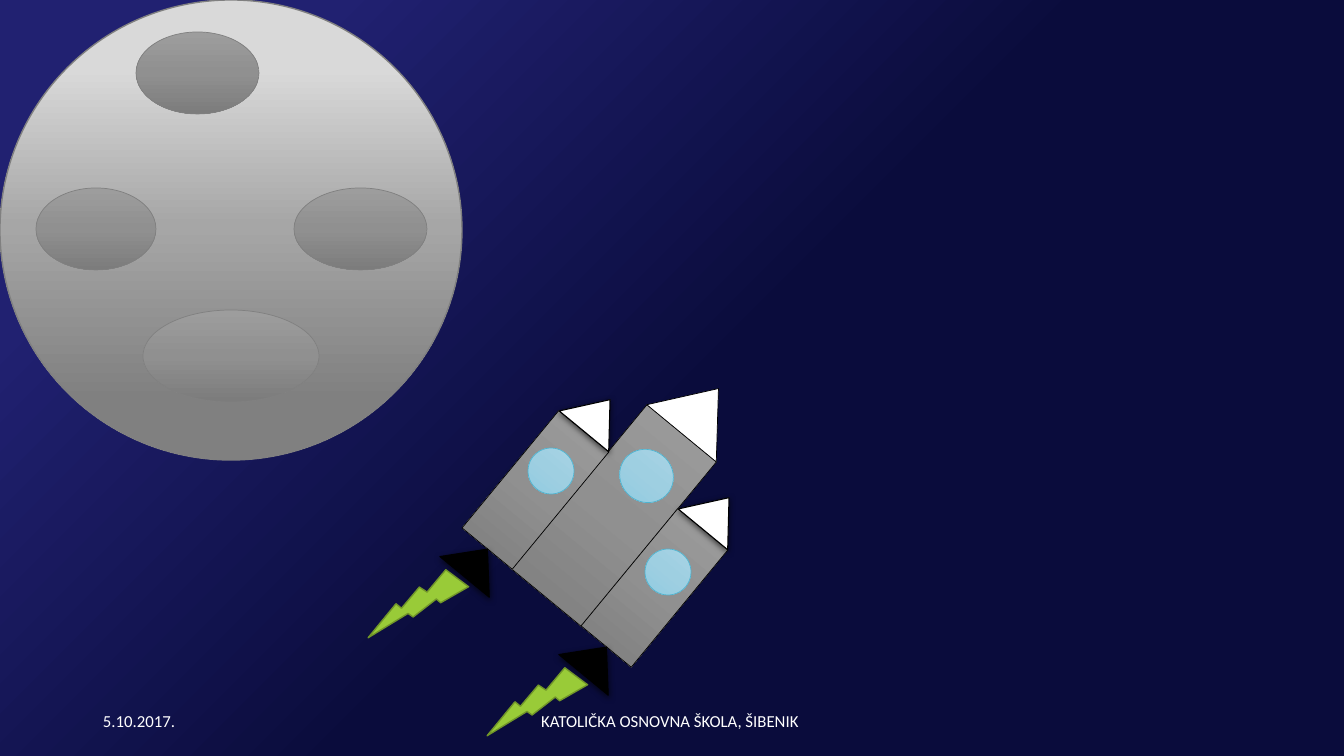
from copy import deepcopy
from dataclasses import dataclass

from lxml import etree
from pptx import Presentation
from pptx.dml.color import RGBColor
from pptx.enum.shapes import MSO_SHAPE
from pptx.enum.text import MSO_ANCHOR, PP_ALIGN
from pptx.oxml.ns import qn
from pptx.util import Emu, Pt

ELLIPSE = MSO_SHAPE.OVAL
RECTANGLE = MSO_SHAPE.RECTANGLE
TRIANGLE = MSO_SHAPE.ISOSCELES_TRIANGLE
BOLT = MSO_SHAPE.LIGHTNING_BOLT
MIDDLE = MSO_ANCHOR.MIDDLE
LEFT, CENTER = PP_ALIGN.LEFT, PP_ALIGN.CENTER

EMU_PER_PX = 12192000 / 1344
SLIDE_SIZE = (1344, 756)
ROCKET_TILT = 39.5
FLAME_TILT = 79.7
BOOSTER_OFFSETS = ((0, 0), (119, 98))


@dataclass(frozen=True)
class Theme:
    """Gradients are (percent, colour) stops."""
    sky: tuple = ((16, "212171"), (52, "0A0C3C"), (94, "0A0C3C"))
    moon: tuple = ((15, "D9D9D9"), (49, "A6A6A6"), (87, "808080"))
    metal: tuple = ((0, "9D9D9D"), (50, "909090"), (100, "7C7C7C"))
    glass: tuple = ((0, "ACD6E6"), (50, "9ECFE1"), (100, "8CCAE0"))
    moon_edge: str = "808080"
    glass_edge: str = "4EB3CF"
    flame: str = "99CB38"
    flame_edge: str = "719629"
    black: str = "000000"
    white: str = "FFFFFF"
    font: str = "Calibri"
    footer_size: int = 12


THEME = Theme()


def px(length):
    return Emu(round(length * EMU_PER_PX))


def rgb(colour):
    return RGBColor.from_string(colour)


def paint_gradient(fill, owner, stops, clockwise_angle):
    """Fill with any number of stops; owner is the element that holds the fill."""
    fill.gradient()
    fill.gradient_angle = 360 - clockwise_angle
    stop_list = owner.find(".//" + qn("a:gsLst"))
    for _ in range(len(stops) - len(stop_list)):
        stop_list.append(deepcopy(stop_list[-1]))
    for stop, (percent, colour) in zip(fill.gradient_stops, stops):
        stop.position = percent / 100
        stop.color.rgb = rgb(colour)


def add_soft_shadow(shape):
    effects = shape.element.spPr.find(qn("a:effectLst"))
    shadow = etree.SubElement(
        effects, qn("a:outerShdw"), blurRad=str(Pt(4.5)), dist=str(Pt(1.5)),
        dir="5400000", algn="ctr", rotWithShape="0")
    colour = etree.SubElement(shadow, qn("a:srgbClr"), val=THEME.black)
    etree.SubElement(colour, qn("a:alpha"), val="63000")


def add_part(group, kind, box, paint, edge, edge_width=0.5, tilt=0, shadow=False):
    """Add one drawn part; paint is a colour or a tuple of gradient stops."""
    part = group.shapes.add_shape(kind, *map(px, box))
    part.rotation = tilt
    part.shadow.inherit = False
    if isinstance(paint, str):
        part.fill.solid()
        part.fill.fore_color.rgb = rgb(paint)
    else:
        paint_gradient(part.fill, part.element, paint, 90)
    part.line.color.rgb = rgb(edge)
    part.line.width = Pt(edge_width)
    if shadow:
        add_soft_shadow(part)


def add_booster_pair(group, kind, box, *style, **options):
    """Add the same part to the left and the right booster."""
    left, top, width, height = box
    for right, down in BOOSTER_OFFSETS:
        add_part(group, kind, (left + right, top + down, width, height),
                 *style, **options)


def add_moon(slide):
    moon = slide.shapes.add_group_shape()
    add_part(moon, ELLIPSE, (0, 0, 462, 460), THEME.moon, THEME.moon_edge, 1)
    craters = ((136, 32, 123, 82), (36, 188, 120, 82),
               (294, 188, 133, 82), (143, 310, 176, 92))
    for crater in craters:
        add_part(moon, ELLIPSE, crater, THEME.metal, THEME.moon_edge)


def add_rocket(slide):
    rocket = slide.shapes.add_group_shape()
    hull = (THEME.metal, THEME.black)
    nozzle = (THEME.black, THEME.black, 0.75)
    nose = (THEME.white, THEME.black)
    add_part(rocket, RECTANGLE, (569, 409, 90, 213), *hull, tilt=ROCKET_TILT)
    add_booster_pair(rocket, RECTANGLE, (503, 414, 65, 152), *hull,
                     tilt=ROCKET_TILT)
    add_booster_pair(rocket, TRIANGLE, (444, 545, 64, 36), *nozzle,
                     tilt=ROCKET_TILT, shadow=True)
    add_part(rocket, TRIANGLE, (655, 382, 90, 58), *nose, tilt=ROCKET_TILT)
    add_booster_pair(rocket, TRIANGLE, (565, 395, 64, 41), *nose, 0.75,
                     tilt=ROCKET_TILT, shadow=True)
    windows = ((619, 450, 55, 52), (528, 448, 46, 46), (645, 549, 46, 46))
    for window in windows:
        add_part(rocket, ELLIPSE, window, THEME.glass, THEME.glass_edge,
                 tilt=ROCKET_TILT)
    add_booster_pair(rocket, BOLT, (390, 548, 53, 108), THEME.flame,
                     THEME.flame_edge, 1, tilt=FLAME_TILT)


def add_footer_text(slide, box, text, alignment):
    frame = slide.shapes.add_textbox(*map(px, box)).text_frame
    frame.word_wrap = True
    frame.vertical_anchor = MIDDLE
    frame.text = text
    paragraph = frame.paragraphs[0]
    paragraph.alignment = alignment
    font = paragraph.runs[0].font
    font.name = THEME.font
    font.size = Pt(THEME.footer_size)
    font.color.rgb = rgb(THEME.white)


def main():
    presentation = Presentation()
    presentation.slide_width, presentation.slide_height = map(px, SLIDE_SIZE)
    slide = presentation.slides.add_slide(presentation.slide_layouts[6])
    paint_gradient(slide.background.fill, slide.element, THEME.sky, 45)
    add_moon(slide)
    add_rocket(slide)
    add_footer_text(slide, (93, 701, 302, 40), "5.10.2017.", LEFT)
    add_footer_text(slide, (445, 701, 454, 40),
                    "KATOLIČKA OSNOVNA ŠKOLA, ŠIBENIK ", CENTER)
    presentation.save("out.pptx")


if __name__ == "__main__":
    main()
